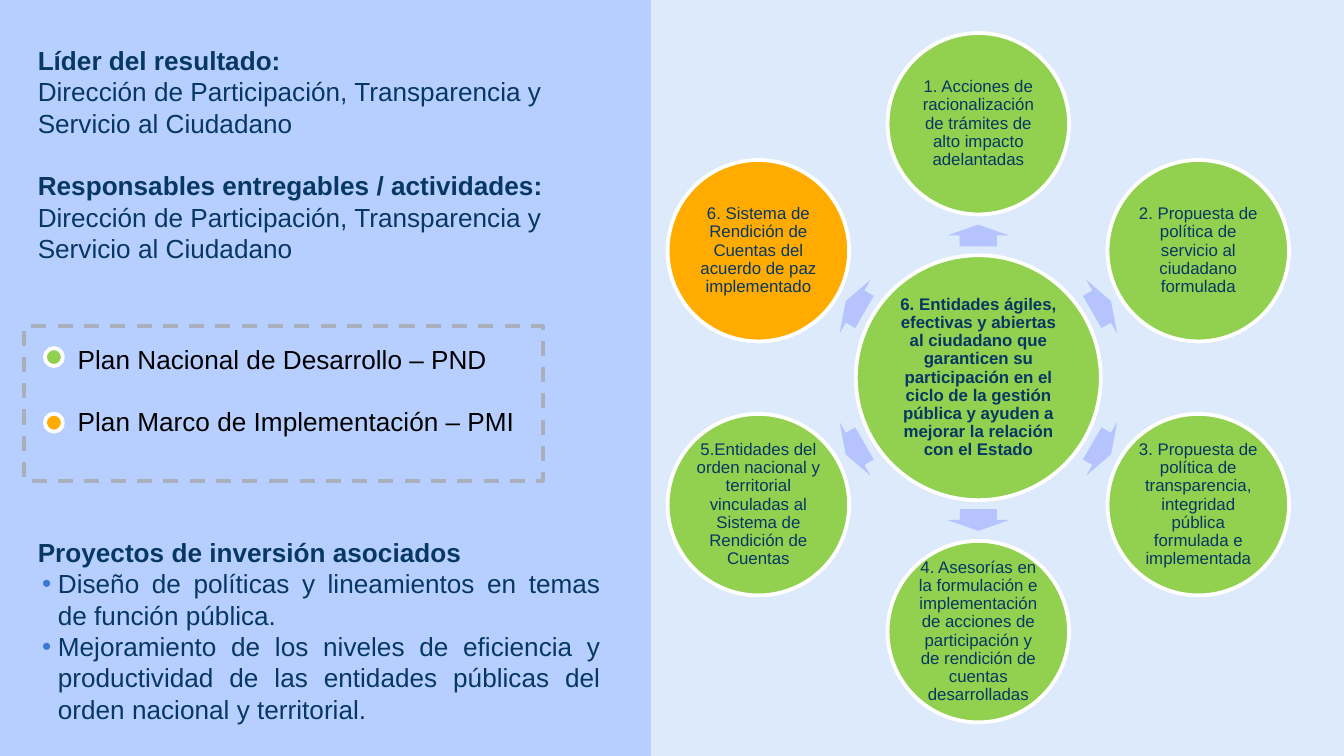
import math
from typing import NamedTuple

from lxml import etree
from pptx import Presentation
from pptx.dml.color import RGBColor
from pptx.enum import dml, shapes, text
from pptx.oxml.ns import qn
from pptx.util import Cm, Pt

NAVY, GREEN, ORANGE, WHITE = "073763", "92D050", "FFAB00", "FFFFFF"
PANEL, SKY, ARROW, DASH, BULLET = "B7CFFF", "DCEAFB", "B5C4FF", "A9AFBC", "3C78D8"
BLANK_LINE = 16.8  # points, one line of 14 pt text

HUB_X, HUB_Y = 18.49, 7.14
HUB_SIZE, HUB_TEXT, NODE_SIZE = 4.63, 3.28, 3.43
NODE_RADIUS, ARROW_RADIUS = 4.8, 2.69


class Deliverable(NamedTuple):
    label: str
    color: str = GREEN


class Line(NamedTuple):
    words: str
    bold: bool = False
    before: float = 0
    bullet: bool = False
    color: str = NAVY


class Plan(NamedTuple):
    name: str
    color: str
    dot_top: float


HUB = ("6. Entidades ágiles, efectivas y abiertas al ciudadano que garanticen su "
       "participación en el ciclo de la gestión pública y ayuden a mejorar la "
       "relación con el Estado")
# Clockwise from the top
DELIVERABLES = [
    Deliverable("1. Acciones de racionalización de trámites de alto impacto adelantadas"),
    Deliverable("2. Propuesta de política de servicio al ciudadano formulada"),
    Deliverable("3. Propuesta de política de transparencia, integridad pública "
                "formulada e implementada"),
    Deliverable("4. Asesorías en la formulación e implementación de acciones de "
                "participación y de rendición de cuentas desarrolladas"),
    Deliverable("5.Entidades del orden nacional y territorial vinculadas al Sistema "
                "de Rendición de Cuentas"),
    Deliverable("6. Sistema de Rendición de Cuentas del acuerdo de paz implementado",
                ORANGE),
]
OFFICE = "Dirección de Participación, Transparencia y\vServicio al Ciudadano"
RESPONSIBLES = [
    Line("Líder del resultado:", bold=True),
    Line(OFFICE),
    Line("Responsables entregables / actividades:", bold=True, before=BLANK_LINE),
    Line(OFFICE),
]
PROJECTS = [
    Line("Proyectos de inversión asociados", bold=True),
    Line("Diseño de políticas y lineamientos en temas de función pública.", bullet=True),
    Line("Mejoramiento de los niveles de eficiencia y productividad de las entidades "
         "públicas del orden nacional y territorial.", bullet=True),
]
PLANS = [
    Plan("Plan Nacional de Desarrollo – PND", GREEN, 6.58),
    Plan("Plan Marco de Implementación – PMI", ORANGE, 7.82),
]


def rgb(color: str) -> RGBColor:
    return RGBColor.from_string(color)


def place(box, left: float, top: float, width: float, height: float) -> None:
    box.left, box.top, box.width, box.height = Cm(left), Cm(top), Cm(width), Cm(height)


def add_shape(slide, kind, left, top, width, height, fill=None, line=None):
    shape = slide.shapes.add_shape(kind, Cm(left), Cm(top), Cm(width), Cm(height))
    shape.shadow.inherit = False
    if fill:
        shape.fill.solid()
        shape.fill.fore_color.rgb = rgb(fill)
    else:
        shape.fill.background()
    if line:
        shape.line.color.rgb = rgb(line)
        shape.line.width = Pt(2)
    else:
        shape.line.fill.background()
    return shape


def add_circle(slide, x: float, y: float, size: float, color: str):
    return add_shape(slide, shapes.MSO_SHAPE.OVAL, x - size / 2, y - size / 2,
                     size, size, color, WHITE)


def format_runs(paragraph, size: float, color: str, bold: bool = False) -> None:
    for run in paragraph.runs:
        run.font.name = "Arial"
        run.font.size = Pt(size)
        run.font.bold = bold
        run.font.color.rgb = rgb(color)


def write_circle_label(box, label: str, bold: bool = False) -> None:
    frame = box.text_frame
    frame.text = label
    frame.word_wrap = True
    frame.auto_size = text.MSO_AUTO_SIZE.NONE
    frame.vertical_anchor = text.MSO_ANCHOR.MIDDLE
    frame.margin_left = frame.margin_right = Cm(0.02)
    frame.margin_top = frame.margin_bottom = Cm(0.02)
    paragraph = frame.paragraphs[0]
    paragraph.alignment = text.PP_ALIGN.CENTER
    paragraph.line_spacing = 0.9
    format_runs(paragraph, 9, NAVY, bold)


def set_bullet(paragraph, shown: bool) -> None:
    props = paragraph._p.get_or_add_pPr()
    props.set("marL", str(Cm(0.38) if shown else 0))
    props.set("indent", str(Cm(-0.3) if shown else 0))
    if shown:
        color = etree.SubElement(props, qn("a:buClr"))
        etree.SubElement(color, qn("a:srgbClr"), val=BULLET)
        etree.SubElement(props, qn("a:buChar"), char="•")
    else:
        etree.SubElement(props, qn("a:buNone"))


def write_lines(box, lines: list[Line]) -> None:
    frame = box.text_frame
    frame.text = "\n".join(line.words for line in lines)
    frame.word_wrap = True
    frame.auto_size = text.MSO_AUTO_SIZE.NONE
    for paragraph, line in zip(frame.paragraphs, lines):
        set_bullet(paragraph, line.bullet)
        paragraph.space_before = Pt(line.before)
        paragraph.alignment = (text.PP_ALIGN.JUSTIFY if line.bullet
                               else text.PP_ALIGN.LEFT)
        format_runs(paragraph, 14, line.color, line.bold)


def bring_to_front(slide, box) -> None:
    slide.shapes._spTree.append(box._element)


def draw_wheel(slide) -> None:
    add_circle(slide, HUB_X, HUB_Y, HUB_SIZE, GREEN)
    title = slide.shapes.title
    place(title, HUB_X - HUB_TEXT / 2, HUB_Y - HUB_TEXT / 2, HUB_TEXT, HUB_TEXT)
    write_circle_label(title, HUB, bold=True)
    bring_to_front(slide, title)

    length, breadth = 0.41, 1.17
    for index, deliverable in enumerate(DELIVERABLES):
        degrees = index * 360 / len(DELIVERABLES) - 90
        dx, dy = math.cos(math.radians(degrees)), math.sin(math.radians(degrees))
        arrow = add_shape(slide, shapes.MSO_SHAPE.RIGHT_ARROW,
                          HUB_X + ARROW_RADIUS * dx - length / 2,
                          HUB_Y + ARROW_RADIUS * dy - breadth / 2,
                          length, breadth, ARROW)
        arrow.adjustments[0] = 0.6
        arrow.rotation = degrees % 360
        node = add_circle(slide, HUB_X + NODE_RADIUS * dx, HUB_Y + NODE_RADIUS * dy,
                          NODE_SIZE, deliverable.color)
        write_circle_label(node, deliverable.label)


def draw_legend(slide) -> None:
    frame = add_shape(slide, shapes.MSO_SHAPE.RECTANGLE, 0.46, 6.17, 9.8, 2.92, line=DASH)
    frame.line.dash_style = dml.MSO_LINE.DASH
    names = slide.shapes.add_textbox(Cm(1.22), Cm(6.36), Cm(9.2), Cm(2.6))
    write_lines(names, [Line(plan.name, before=BLANK_LINE if index else 0, color="000000")
                        for index, plan in enumerate(PLANS)])
    for plan in PLANS:
        add_circle(slide, 1.02, plan.dot_top + 0.17, 0.34, plan.color)


def main() -> None:
    deck = Presentation()
    deck.slide_width, deck.slide_height = Cm(25.4), Cm(14.29)
    slide = deck.slides.add_slide(deck.slide_layouts.get_by_name("Two Content"))
    slide.background.fill.solid()
    slide.background.fill.fore_color.rgb = rgb(SKY)

    add_shape(slide, shapes.MSO_SHAPE.RECTANGLE, 0, 0, 12.27, 14.29, PANEL, PANEL)
    draw_wheel(slide)
    responsibles, projects = slide.placeholders[1], slide.placeholders[2]
    place(responsibles, 0.46, 0.71, 12.83, 4.45)
    write_lines(responsibles, RESPONSIBLES)
    place(projects, 0.46, 10.01, 11.15, 3.84)
    write_lines(projects, PROJECTS)
    for box in (responsibles, projects):
        bring_to_front(slide, box)
    draw_legend(slide)
    deck.save("out.pptx")


if __name__ == "__main__":
    main()
